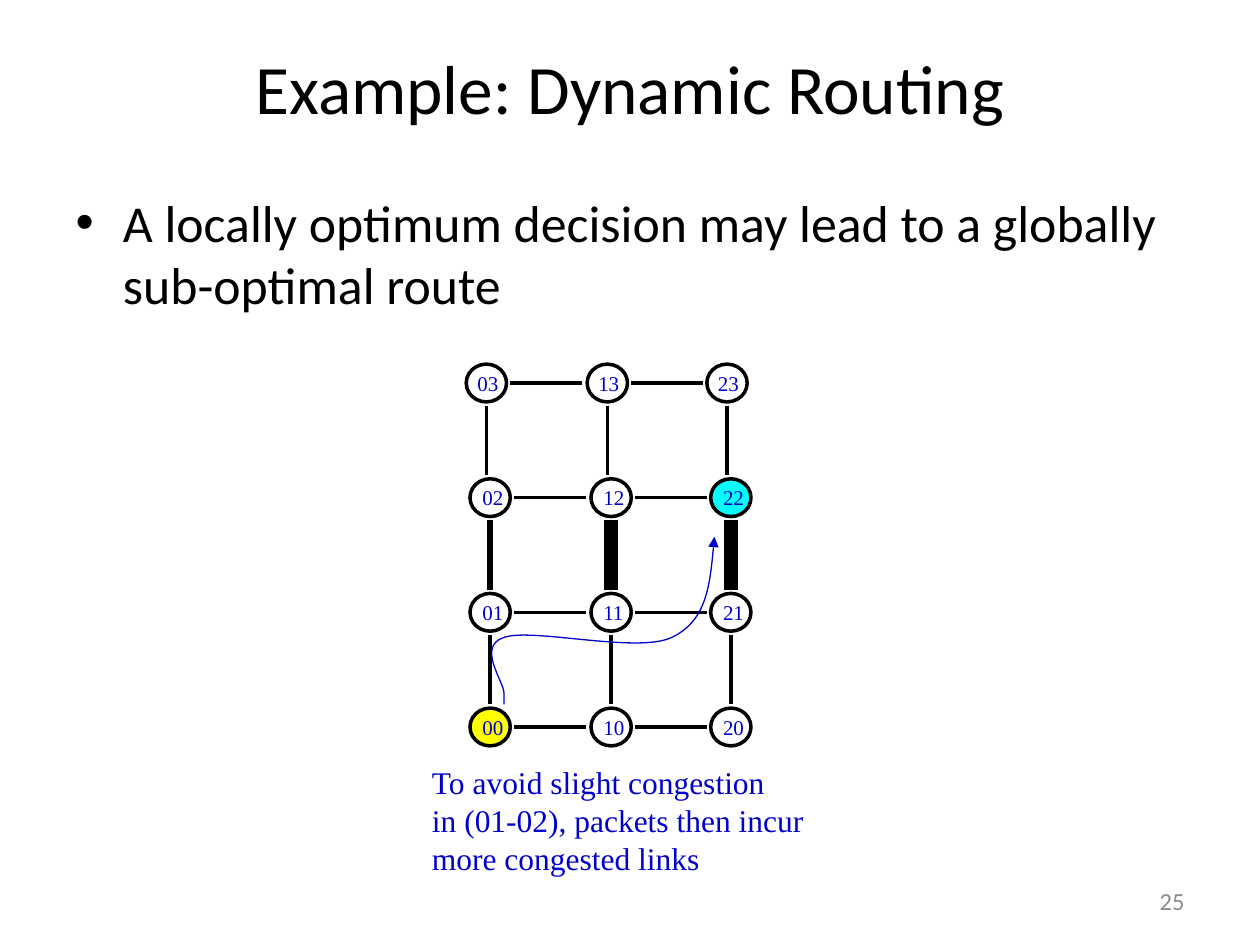
import pptx
import pptx.dml.color
import pptx.enum.shapes
import pptx.enum.text
import pptx.oxml.ns
import pptx.oxml.xmlchemy
import pptx.util

PX = 9144
COLOURS = {"black": "000000", "blue": "0000CC", "cyan": "00FFFF", "yellow": "FFFF00", "grey": "8C8C8C"}
ALIGN = pptx.enum.text.PP_ALIGN
ANCHOR = pptx.enum.text.MSO_ANCHOR
FIT = pptx.enum.text.MSO_AUTO_SIZE
SANS, SERIF = "Calibri", "Times New Roman"

COLUMNS = (0, 96, 191)
ROW_STEP = 91
NODE_SIZE = (32, 30)
TOP_ROW_SHIFT = -3
NODE_FILLS = {"22": "cyan", "00": "yellow"}
LINK_WIDTHS = {"02": 3, "12": 8, "22": 8}
ROUTE = ((27, 270), (27, 270), (27, 270), (27, 261), (27, 252), (5, 224), (27, 217),
         (49, 209), (133, 230), (160, 217), (188, 204), (191, 170), (194, 137))


def colour(name):
    """Return the named colour."""
    return pptx.dml.color.RGBColor.from_string(COLOURS[name])


def scaled(*lengths):
    """Turn px lengths into EMU."""
    return [length * PX for length in lengths]


def write(shape, lines, name, size, shade, **frame_format):
    """Fill a shape with paragraphs in one font and set its frame format."""
    align = frame_format.pop("align", ALIGN.LEFT)
    frame = shape.text_frame
    for key, value in frame_format.items():
        setattr(frame, key, value)
    frame.text = "\n".join(lines)
    for para in frame.paragraphs:
        para.alignment = align
        font = para.runs[0].font
        for key, value in {"name": name, "size": pptx.util.Pt(size)}.items():
            setattr(font, key, value)
        font.color.rgb = colour(shade)


def place(shape, box):
    """Move and size a shape to a px box."""
    for key, value in zip(("left", "top", "width", "height"), scaled(*box)):
        setattr(shape, key, value)
    return shape


def outline(shape, shade, width):
    """Give a shape a line colour and width."""
    shape.line.color.rgb = colour(shade)
    shape.line.width = pptx.util.Pt(width)


def add_link(page, start, end, width):
    """Draw a plain black link between two points."""
    link = page.shapes.add_connector(
        pptx.enum.shapes.MSO_CONNECTOR.STRAIGHT, *scaled(*start, *end))
    outline(link, "black", width)
    link._element.spPr.append(pptx.oxml.xmlchemy.OxmlElement("a:effectLst"))


def add_node(page, left, top, label):
    """Draw one round mesh node."""
    node = page.shapes.add_shape(
        pptx.enum.shapes.MSO_SHAPE.OVAL, *scaled(left, top, *NODE_SIZE))
    node.shadow.inherit = False
    outline(node, "black", 2)
    if label in NODE_FILLS:
        node.fill.solid()
        node.fill.fore_color.rgb = colour(NODE_FILLS[label])
    else:
        node.fill.background()


def add_text(page, box, lines, name, size, shade, **frame_format):
    """Add a text box."""
    text_box = page.shapes.add_textbox(*scaled(*box))
    write(text_box, lines, name, size, shade, **frame_format)


def add_route(page, left, top):
    """Draw the curved route with an arrowhead at its end."""
    points = [(left + x, top + y) for x, y in ROUTE]
    builder = page.shapes.build_freeform(*points[0], scale=PX)
    builder.add_line_segments(points[1:], close=False)
    route = builder.convert_to_shape()
    route.shadow.inherit = False
    route.fill.background()
    outline(route, "blue", 0.75)
    segments = list(route._element.iter(pptx.oxml.ns.qn("a:lnTo")))
    for first in range(0, len(segments), 3):
        curve = pptx.oxml.xmlchemy.OxmlElement("a:cubicBezTo")
        segments[first].addprevious(curve)
        for segment in segments[first:first + 3]:
            curve.append(segment[0])
            segment.getparent().remove(segment)
    head = pptx.oxml.xmlchemy.OxmlElement("a:tailEnd")
    head.set("type", "triangle")
    route._element.spPr.find(pptx.oxml.ns.qn("a:ln")).append(head)


def add_mesh(page, left, top):
    """Draw the mesh of nodes, links, labels and the route."""
    for row in range(4):
        y = top + row * ROW_STEP
        for column, offset in enumerate(COLUMNS):
            x = left + offset + (TOP_ROW_SHIFT if row == 0 else 0)
            label = f"{column}{3 - row}"
            if column < 2:
                add_link(page, (x + 35, y + 15), (x + 92, y + 15), 2)
            if row < 3:
                add_link(page, (x + 16, y + 33), (x + 16, y + 88), LINK_WIDTHS.get(label, 2))
            add_node(page, x, y, label)
            add_text(page, (x - (row == 0), y, 37, 30), [label], SERIF, 12, "blue",
                     word_wrap=False, auto_size=FIT.SHAPE_TO_FIT_TEXT)
    add_route(page, left, top)


def add_heading(page):
    """Place the title and the bullet."""
    title, body = page.placeholders
    write(place(title, (50, 30, 900, 78)), ["Example: Dynamic Routing"], SANS, 39.6, "black",
          align=ALIGN.CENTER, vertical_anchor=ANCHOR.MIDDLE, auto_size=FIT.NONE)
    write(place(body, (50, 146, 900, 108)),
          ["A locally optimum decision may lead to a globally sub-optimal route"],
          SANS, 29.6, "black", auto_size=FIT.NONE)


def main():
    """Build and save the slide."""
    deck = pptx.Presentation()
    deck.slide_width, deck.slide_height = scaled(1000, 750)
    page = deck.slides.add_slide(deck.slide_layouts[1])
    add_heading(page)
    add_mesh(page, 373, 289)
    add_text(page, (333, 601, 315, 100),
             ["To avoid slight congestion", "in (01-02), packets then incur", "more congested links"],
             SERIF, 18, "blue", word_wrap=False, auto_size=FIT.SHAPE_TO_FIT_TEXT)
    add_text(page, (717, 695, 233, 40), ["25"], SANS, 14, "grey", word_wrap=True,
             align=ALIGN.RIGHT, vertical_anchor=ANCHOR.MIDDLE)
    deck.save("out.pptx")


if __name__ == "__main__":
    main()
